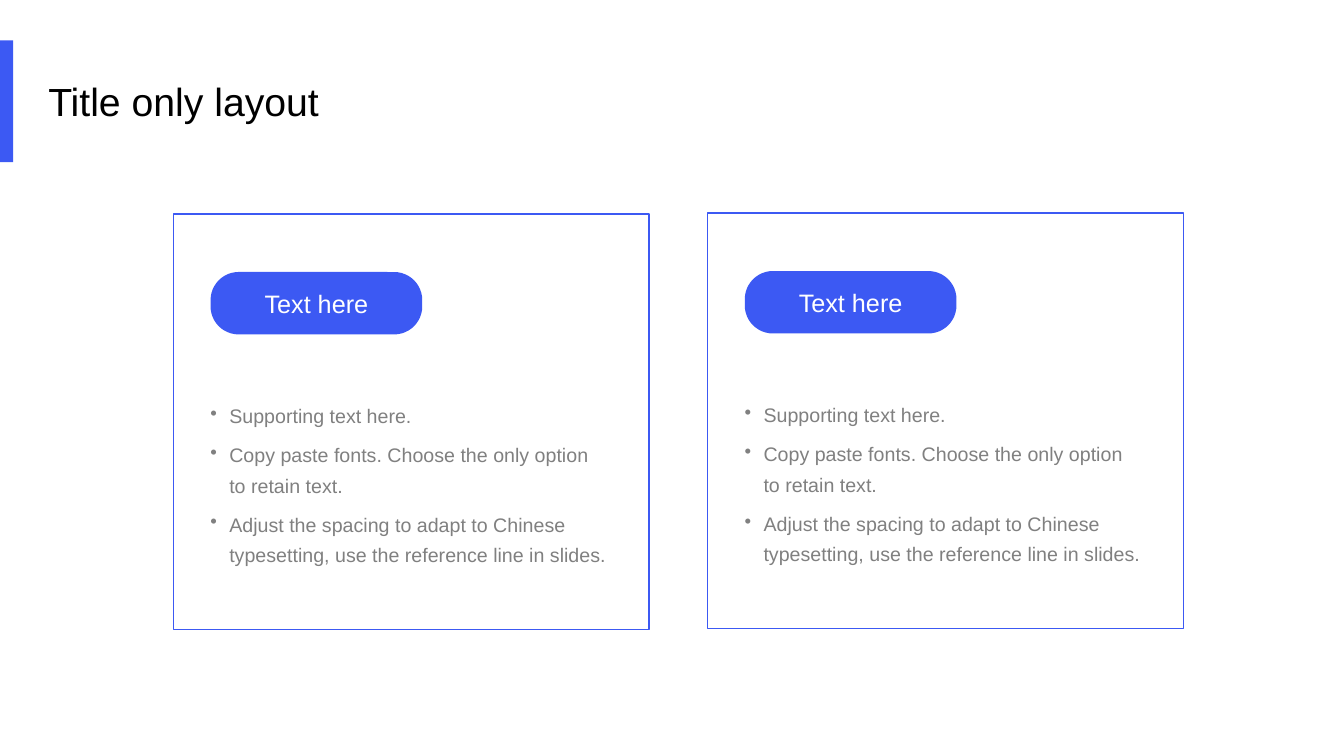
from lxml import etree
from pptx import Presentation
from pptx.dml.color import RGBColor
from pptx.enum.shapes import MSO_SHAPE
from pptx.enum.text import MSO_ANCHOR, PP_ALIGN
from pptx.oxml.ns import qn
from pptx.util import Pt

RECTANGLE = MSO_SHAPE.RECTANGLE
ROUNDED = MSO_SHAPE.ROUNDED_RECTANGLE
MIDDLE = MSO_ANCHOR.MIDDLE
CENTER = PP_ALIGN.CENTER

COLORS = {"blue": "3C59F3", "white": "FFFFFF", "black": "000000", "grey": "808080"}
CARDS = [(123.84, 152.9), (505.44, 152.2)]
BULLETS = [
    "Supporting text here.",
    "Copy paste fonts. Choose the only option to retain text.",
    "Adjust the spacing to adapt to Chinese typesetting, use the reference line in slides.",
]


def add_block(kind, left, top, width, height, filled=True):
    """Add a blue shape, either solid or only outlined."""
    block = page.shapes.add_shape(kind, Pt(left), Pt(top), Pt(width), Pt(height))
    block.shadow.inherit = False
    blue = RGBColor.from_string(COLORS["blue"])
    if filled:
        block.fill.solid()
        block.fill.fore_color.rgb = blue
        block.line.fill.background()
    else:
        block.fill.background()
        block.line.color.rgb = blue
        block.line.width = Pt(1)
    return block


def write(paragraph, text, size, color):
    paragraph.text = text
    paragraph.font.name = "Arial"
    paragraph.font.size = Pt(size)
    paragraph.font.color.rgb = RGBColor.from_string(COLORS[color])


deck = Presentation()
deck.slide_width, deck.slide_height = Pt(960), Pt(540)
page = deck.slides.add_slide(deck.slide_layouts[6])

# Title with its accent bar
add_block(RECTANGLE, 0, 28.8, 9.4, 87.1)
title = page.shapes.add_textbox(Pt(27.4), Pt(51.8), Pt(252.7), Pt(41))
title.text_frame.word_wrap = True
write(title.text_frame.paragraphs[0], "Title only layout", 28, "black")

# Two cards, each with a heading pill and a bullet list
for left, top in CARDS:
    add_block(RECTANGLE, left, top, 339.84, 296.64, filled=False)

    pill = add_block(ROUNDED, left + 26.6, top + 41.4, 151.2, 44.6)
    pill.adjustments[0] = 0.45
    pill.text_frame.vertical_anchor = MIDDLE
    heading = pill.text_frame.paragraphs[0]
    heading.alignment = CENTER
    write(heading, "Text here", 18, "white")

    body = page.shapes.add_textbox(Pt(left + 19.4), Pt(top + 127.2), Pt(297.4), Pt(155.5))
    frame = body.text_frame
    frame.word_wrap = True
    for index, text in enumerate(BULLETS):
        item = frame.add_paragraph() if index else frame.paragraphs[0]
        write(item, text, 14, "grey")
        item.line_spacing = 1.3
        item.space_after = Pt(6)
        properties = item._p.get_or_add_pPr()
        properties.set("marL", str(Pt(13.5)))
        properties.set("indent", str(-Pt(13.5)))
        bullet = etree.Element(qn("a:buChar"), char="•")
        properties.find(qn("a:defRPr")).addprevious(bullet)

deck.save("out.pptx")
